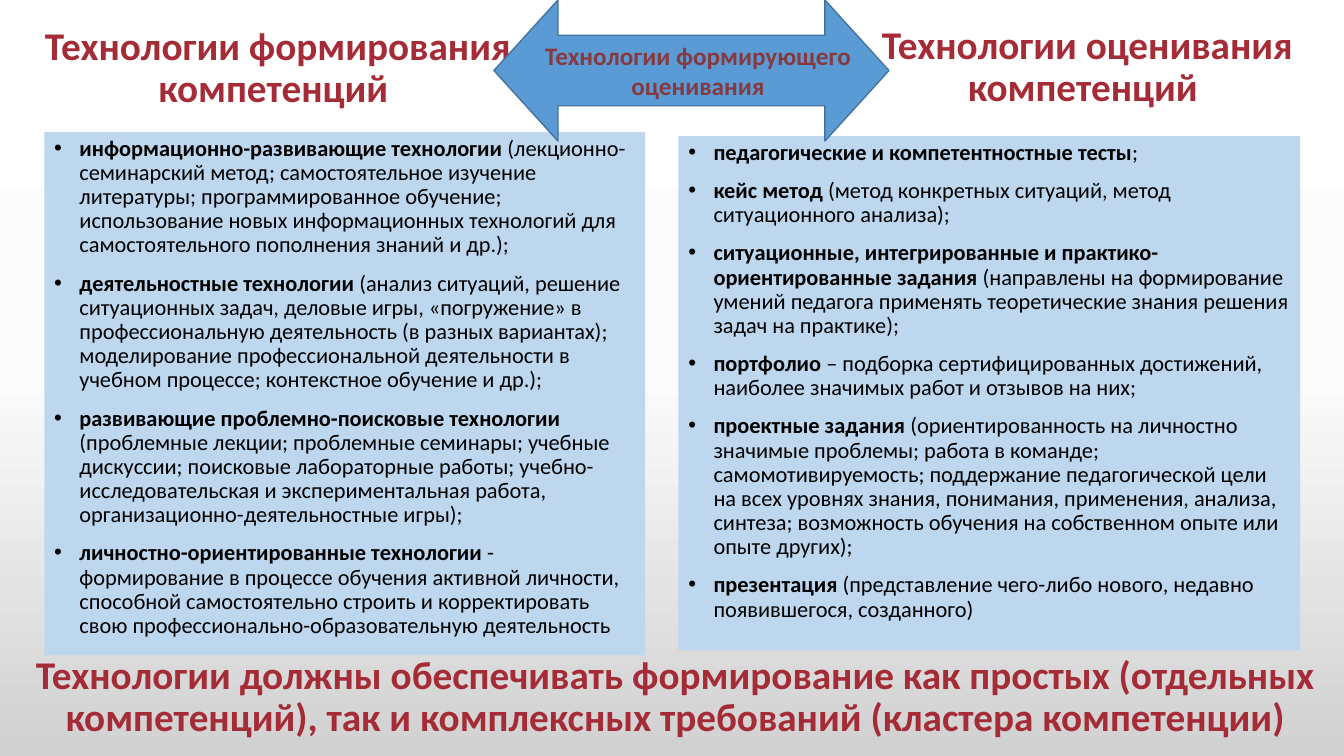
from copy import deepcopy

from lxml.etree import SubElement
from pptx import Presentation
from pptx.dml.color import RGBColor
from pptx.enum.shapes import MSO_SHAPE as Preset
from pptx.enum.text import MSO_ANCHOR as Anchor, PP_ALIGN as Align
from pptx.oxml.ns import qn
from pptx.util import Pt

CRIMSON = RGBColor(0xA5, 0x2C, 0x36)
MAROON = RGBColor(0x87, 0x39, 0x40)
BLACK = RGBColor(0, 0, 0)
PALE_BLUE = RGBColor(0xBD, 0xD7, 0xEE)
BLUE = RGBColor(0x5B, 0x9B, 0xD5)
DARK_BLUE = RGBColor(0x43, 0x73, 0x9E)
BACKDROP = [
    (0, RGBColor(0xFF, 0xFF, 0xFF)),
    (0.5, RGBColor(0xFB, 0xFB, 0xFB)),
    (1, RGBColor(0xD1, 0xD1, 0xD1)),
]

FORMING = [
    ("информационно-развивающие технологии ",
     "(лекционно-семинарский метод; самостоятельное изучение литературы; "
     "программированное обучение; использование новых информационных технологий "
     "для самостоятельного пополнения знаний и др.);"),
    ("деятельностные технологии ",
     "(анализ ситуаций, решение ситуационных задач, деловые игры, «погружение» "
     "в профессиональную деятельность (в разных вариантах); моделирование "
     "профессиональной деятельности в учебном процессе; контекстное обучение и др.);"),
    ("развивающие проблемно-поисковые технологии ",
     "(проблемные лекции; проблемные семинары; учебные дискуссии; поисковые "
     "лабораторные работы; учебно-исследовательская и экспериментальная работа, "
     "организационно-деятельностные игры);"),
    ("личностно-ориентированные технологии ",
     "- формирование в процессе обучения активной личности, способной самостоятельно "
     "строить и корректировать свою профессионально-образовательную деятельность"),
]
ASSESSING = [
    ("педагогические и компетентностные тесты", ";"),
    ("кейс метод ", "(метод конкретных ситуаций, метод ситуационного анализа);"),
    ("ситуационные, интегрированные и практико-ориентированные задания ",
     "(направлены на формирование умений педагога применять теоретические знания "
     "решения задач на практике);"),
    ("портфолио ",
     "– подборка сертифицированных достижений, наиболее значимых работ и отзывов на них;"),
    ("проектные задания ",
     "(ориентированность на личностно значимые проблемы; работа в команде; "
     "самомотивируемость; поддержание педагогической цели на всех уровнях знания, "
     "понимания, применения, анализа, синтеза; возможность обучения на собственном "
     "опыте или опыте других);"),
    ("презентация", " (представление чего-либо нового, недавно появившегося, созданного)"),
]


def apply(target, values):
    for name, value in values.items():
        setattr(target, name, value)


class TechnologySlide:
    """Holds the text style and the current slide, and draws its elements."""

    font = "Calibri"
    heading = {"size": Pt(28), "bold": True}
    label = {"size": Pt(18), "bold": True}
    body = {"size": Pt(16)}
    spaced = {"line_spacing": 0.9, "space_before": Pt(10)}

    def __init__(self, slide):
        self.slide = slide

    def backdrop(self, stops):
        fill = self.slide.background.fill
        fill.gradient()
        fill.gradient_angle = 270
        first = next(self.slide.element.iter(qn("a:gs")))
        first.addnext(deepcopy(first))
        for stop, (position, color) in zip(fill.gradient_stops, stops):
            stop.position = position
            stop.color.rgb = color

    def add_text(self, paragraph, text, color, style):
        run = paragraph.add_run()
        run.text = text
        apply(run.font, {"name": self.font, **style})
        run.font.color.rgb = color

    def caption(self, box, lines, color, style, anchor, spacing):
        frame = self.slide.shapes.add_textbox(*map(Pt, box)).text_frame
        apply(frame, {"word_wrap": True, "vertical_anchor": anchor})
        for index, line in enumerate(lines):
            paragraph = frame.add_paragraph() if index else frame.paragraphs[0]
            apply(paragraph, {"alignment": Align.CENTER, **spacing})
            self.add_text(paragraph, line, color, style)

    def shape(self, preset, box, color):
        shape = self.slide.shapes.add_shape(preset, *map(Pt, box))
        shape.shadow.inherit = False
        shape.fill.solid()
        shape.fill.fore_color.rgb = color
        return shape

    def panel(self, box, items):
        panel = self.shape(Preset.RECTANGLE, box, PALE_BLUE)
        panel.line.fill.background()
        frame = panel.text_frame
        apply(frame, {"word_wrap": True, "vertical_anchor": Anchor.TOP})
        for index, (term, details) in enumerate(items):
            paragraph = frame.add_paragraph() if index else frame.paragraphs[0]
            apply(paragraph, {"alignment": Align.LEFT, **self.spaced})
            self.bullet(paragraph)
            self.add_text(paragraph, term, BLACK, {**self.body, "bold": True})
            self.add_text(paragraph, details, BLACK, {**self.body, "bold": False})

    def bullet(self, paragraph):
        properties = paragraph._p.get_or_add_pPr()
        properties.set("marL", str(Pt(18)))
        properties.set("indent", str(Pt(-18)))
        SubElement(properties, qn("a:buFont")).set("typeface", "Arial")
        SubElement(properties, qn("a:buChar")).set("char", "•")

    def double_arrow(self, box):
        arrow = self.shape(Preset.LEFT_RIGHT_ARROW, box, BLUE)
        arrow.adjustments[0] = 0.5
        arrow.adjustments[1] = 0.454
        arrow.line.color.rgb = DARK_BLUE
        arrow.line.width = Pt(1)


def main():
    deck = Presentation()
    apply(deck, {"slide_width": Pt(960), "slide_height": Pt(540)})
    page = TechnologySlide(deck.slides.add_slide(deck.slide_layouts[6]))
    page.backdrop(BACKDROP)

    headings = [
        ((12.2, 457.2, 939.6, 82.8), Anchor.MIDDLE,
         "Технологии должны обеспечивать формирование как простых (отдельных "
         "компетенций), так и комплексных требований (кластера компетенции)"),
        ((0, 18, 396.7, 64.8), Anchor.BOTTOM, "Технологии формирования компетенций "),
        ((593.3, 18.7, 366.5, 63.4), Anchor.BOTTOM, "Технологии оценивания компетенций "),
    ]
    for box, anchor, text in headings:
        page.caption(box, [text], CRIMSON, page.heading, anchor, page.spaced)

    page.panel((31.7, 94.3, 429.1, 373.7), FORMING)
    page.panel((484.6, 97.2, 444.2, 367.2), ASSESSING)
    page.double_arrow((352.8, 0, 282.2, 100.8))
    page.caption((380.9, 25.2, 235.4, 72.7), ["Технологии формирующего ", "оценивания"],
                 MAROON, page.label, Anchor.TOP, {})
    deck.save("out.pptx")


if __name__ == "__main__":
    main()
